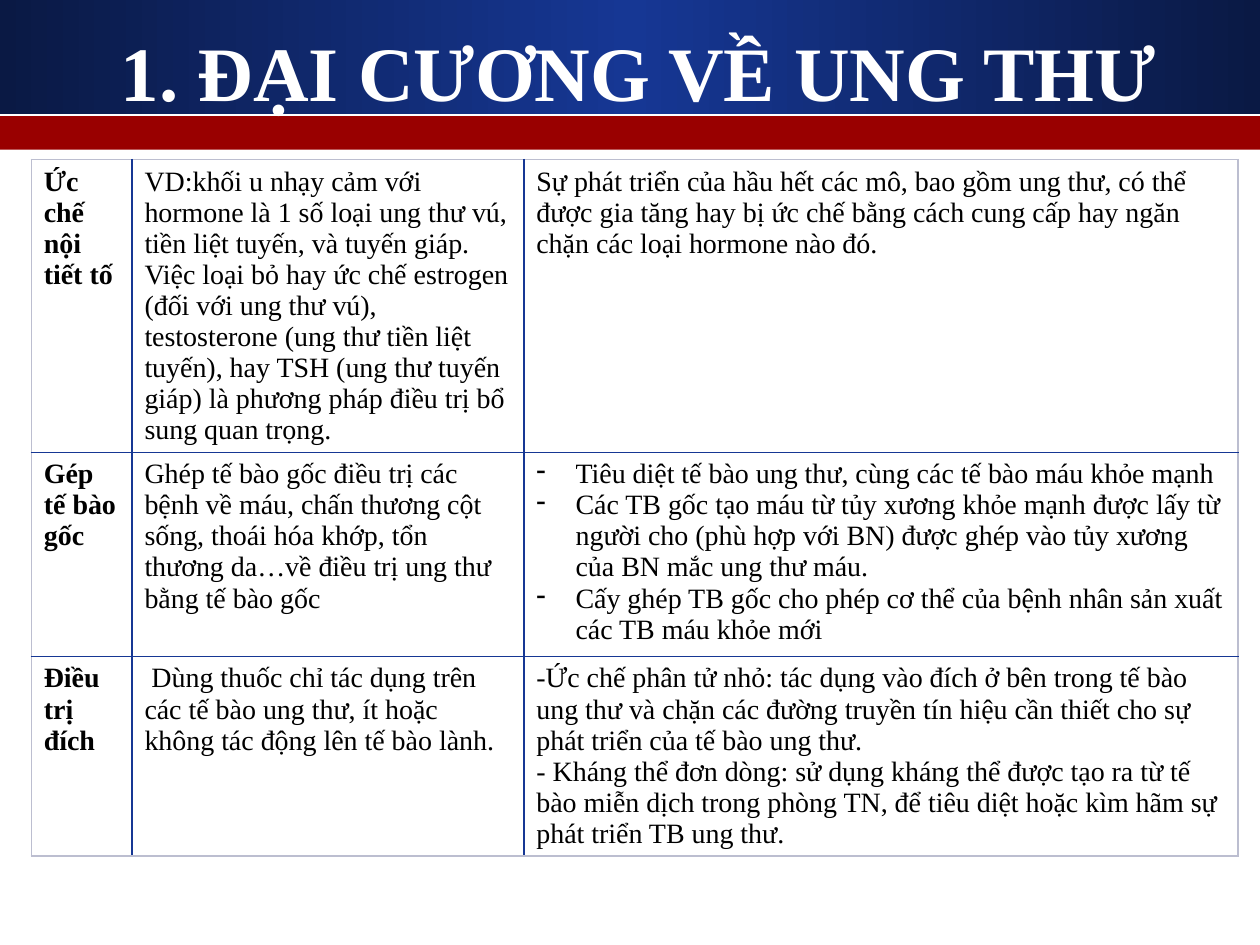
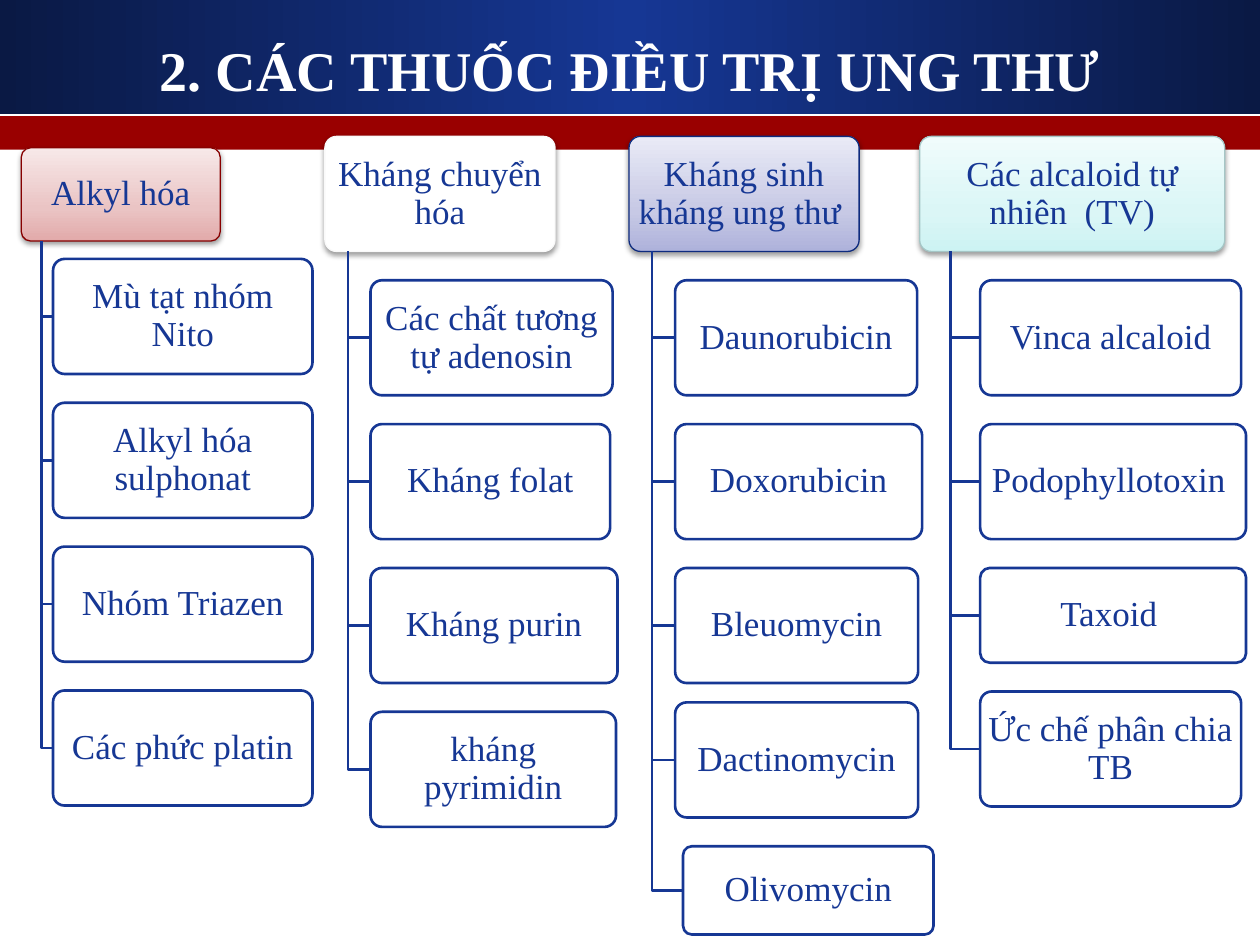
from dataclasses import dataclass

from lxml import etree
from pptx import Presentation
from pptx.dml.color import RGBColor
from pptx.enum.shapes import MSO_SHAPE
from pptx.enum.text import MSO_ANCHOR, MSO_AUTO_SIZE, PP_ALIGN
from pptx.oxml.ns import qn
from pptx.util import Cm, Pt

RECTANGLE = MSO_SHAPE.RECTANGLE
ROUNDED = MSO_SHAPE.ROUNDED_RECTANGLE
MIDDLE = MSO_ANCHOR.MIDDLE
CENTER = PP_ALIGN.CENTER
NO_FIT = MSO_AUTO_SIZE.NONE
TITLE_ONLY = 5


@dataclass(frozen=True)
class Theme:
    font: str = "Times New Roman"
    blue: str = "163794"
    navy: str = "0A1944"
    red: str = "990000"
    white: str = "FFFFFF"
    black: str = "000000"
    table_edge: str = "BCBED0"
    cell_size: int = 16
    box_size: int = 20
    box_line: float = 1.5
    head_line: float = 0.75


THEME = Theme()
GAP = 0.58
BOX_HEIGHT = 2.32


@dataclass(frozen=True)
class Drug:
    name: str
    width: float
    height: float = BOX_HEIGHT
    gap: float = GAP
    shift: float = 0


@dataclass(frozen=True)
class Family:
    name: str
    place: tuple  # left, top, width, height of the head, in cm
    fill: tuple
    line: str
    drug_left: float
    drugs: tuple


FAMILIES = (
    Family("Alkyl hóa", (0.43, 2.98, 4.01, 1.88),
           ((0, "E2AAAA"), (35, "EAC4C4"), (100, "F7E8E8")), "870000", 1.07, (
               Drug("Mù tạt nhóm Nito", 5.23, gap=0.36),
               Drug("Alkyl hóa sulphonat", 5.23),
               Drug("Nhóm Triazen", 5.23),
               Drug("Các phức platin", 5.23))),
    Family("Kháng chuyển hóa", (6.55, 2.75, 4.64, BOX_HEIGHT),
           ((0, THEME.white), (100, THEME.white)), "F9F9F9", 7.47, (
               Drug("Các chất tương tự adenosin", 4.88),
               Drug("Kháng folat", 4.83),
               Drug("Kháng purin", 4.98),
               Drug("kháng pyrimidin", 4.95))),
    Family("Kháng sinh kháng ung thư ", (12.68, 2.75, 4.64, BOX_HEIGHT),
           ((0, "AEB2DB"), (35, "C7C9E5"), (100, "E9EAF6")), "0E2B7E", 13.61, (
               Drug("Daunorubicin", 4.88),
               Drug("Doxorubicin", 4.98),
               Drug("Bleuomycin", 4.9),
               Drug("Dactinomycin", 4.9, gap=0.39),
               Drug("Olivomycin", 5.05, height=1.78, shift=0.16))),
    Family("Các alcaloid tự nhiên  (TV)", (18.54, 2.75, 6.15, BOX_HEIGHT),
           ((0, "CDF3F3"), (35, "DBF6F6"), (100, "F0FCFC")), "A5C6C6", 19.76, (
               Drug("Vinca alcaloid", 5.26),
               Drug("Podophyllotoxin ", 5.36),
               Drug("Taxoid ", 5.36, height=1.91),
               Drug("Ức chế phân chia TB", 5.26))),
)

# Each cell is a list of paragraphs; a leading tab marks a bulleted one
TREATMENTS = (
    (["Ức chế nội tiết tố"],
     ["VD:khối u nhạy cảm với hormone là 1 số loại ung thư vú, tiền liệt tuyến, "
      "và tuyến giáp. Việc loại bỏ hay ức chế estrogen (đối với ung thư vú), "
      "testosterone (ung thư tiền liệt tuyến), hay TSH (ung thư tuyến giáp) là "
      "phương pháp điều trị bổ sung quan trọng."],
     ["Sự phát triển của hầu hết các mô, bao gồm ung thư, có thể được gia tăng "
      "hay bị ức chế bằng cách cung cấp hay ngăn chặn các loại hormone nào đó."]),
    (["Gép tế bào gốc"],
     ["Ghép tế bào gốc điều trị các bệnh về máu, chấn thương cột sống, thoái hóa "
      "khớp, tổn thương da…về điều trị ung thư bằng tế bào gốc"],
     ["\tTiêu diệt tế bào ung thư, cùng các tế bào máu khỏe mạnh",
      "\tCác TB gốc tạo máu từ tủy xương khỏe mạnh được lấy từ người cho (phù hợp "
      "với BN) được ghép vào tủy xương của BN mắc ung thư máu.",
      "\tCấy ghép TB gốc cho phép cơ thể của bệnh nhân sản xuất các TB máu khỏe "
      "mới"]),
    (["Điều trị đích"],
     [" Dùng thuốc chỉ tác dụng trên các tế bào ung thư, ít hoặc không tác động "
      "lên tế bào lành."],
     ["-Ức chế phân tử nhỏ: tác dụng vào đích ở bên trong tế bào ung thư và chặn "
      "các đường truyền tín hiệu cần thiết cho sự phát triển của tế bào ung thư.",
      "- Kháng thể đơn dòng: sử dụng kháng thể được tạo ra từ tế bào miễn dịch "
      "trong phòng TN, để tiêu diệt hoặc kìm hãm sự phát triển TB ung thư."]),
)


# Formatting helpers
def apply_format(target, values):
    for name, value in values.items():
        setattr(target, name, value)


def format_font(para, size, color, bold=False):
    apply_format(para.font, {"name": THEME.font, "size": Pt(size), "bold": bold})
    para.font.color.rgb = RGBColor.from_string(color)


def lengths(*values):
    return [Cm(value) for value in values]


def add_node(parent, tag, **values):
    return etree.SubElement(parent, qn(tag), values)


def fill_solid(target, color):
    target.fill.solid()
    target.fill.fore_color.rgb = RGBColor.from_string(color)


def fill_gradient(shape, stops, angle):
    shape.fill.gradient()
    shape.fill.gradient_angle = angle
    stop_list = shape._element.spPr.find(qn("a:gradFill")).find(qn("a:gsLst"))
    for stop in list(stop_list):
        stop_list.remove(stop)
    for position, color in stops:
        stop = add_node(stop_list, "a:gs", pos=str(position * 1000))
        add_node(stop, "a:srgbClr", val=color)


def draw_line(shape, color, width):
    shape.line.color.rgb = RGBColor.from_string(color)
    shape.line.width = Pt(width)


def add_soft_shadow(shape):
    effects = shape._element.spPr.find(qn("a:effectLst"))
    shadow = add_node(effects, "a:outerShdw", blurRad="40000", dist="20000",
                      dir="5400000", rotWithShape="0")
    color = add_node(shadow, "a:srgbClr", val=THEME.black)
    add_node(color, "a:alpha", val="38000")


# Shared parts
def add_bands(layout, page):
    """Draw the header bands and move them behind the layout's placeholders."""
    bands = [page.shapes.add_shape(RECTANGLE, *lengths(0, top, 25.4, height))
             for top, height in ((0, 2.31), (2.34, 0.68))]
    blue_band, red_band = bands
    fill_gradient(blue_band, ((0, THEME.navy), (50, THEME.blue), (100, THEME.navy)), 0)
    fill_solid(red_band, THEME.red)
    for index, band in enumerate(bands):
        band.shadow.inherit = False
        band.line.fill.background()
        band._element.nvSpPr.cNvPr.set("id", str(101 + index))
        layout.shapes._spTree.insert(2 + index, band._element)


def set_title(page, text, place, size):
    title = page.shapes.title
    apply_format(title, dict(zip(("left", "top", "width", "height"), lengths(*place))))
    frame = title.text_frame
    frame.text = text
    apply_format(frame, {"vertical_anchor": MIDDLE, "auto_size": NO_FIT, "word_wrap": True})
    para = frame.paragraphs[0]
    para.alignment = CENTER
    format_font(para, size, THEME.white, bold=True)


# Table of treatments
def set_borders(cell, colors):
    properties = cell._tc.get_or_add_tcPr()
    for side, color in zip("LRTB", colors):
        line = add_node(properties, f"a:ln{side}", w=str(Pt(1)))
        add_node(add_node(line, "a:solidFill"), "a:srgbClr", val=color)


def add_bullet(para):
    properties = para._p.get_or_add_pPr()
    indent = Cm(0.79)
    properties.set("marL", str(indent))
    properties.set("indent", str(-indent))
    add_node(properties, "a:buChar", char="-")


def write_cell(cell, texts, bold):
    frame = cell.text_frame
    for index, text in enumerate(texts):
        para = frame.add_paragraph() if index else frame.paragraphs[0]
        if text.startswith("\t"):
            add_bullet(para)
        para.text = text.lstrip("\t")
        format_font(para, THEME.cell_size, THEME.black, bold)


def add_treatment_table(page):
    widths, heights = (2.03, 7.9, 14.4), (5.8, 4.12, 3.56)
    table = page.shapes.add_table(len(heights), len(widths),
                                  *lengths(0.63, 3.22, sum(widths), sum(heights))).table
    apply_format(table, {"first_row": False, "horz_banding": False})
    for column, width in zip(table.columns, widths):
        column.width = Cm(width)
    for row, height in zip(table.rows, heights):
        row.height = Cm(height)
    for r, texts_in_row in enumerate(TREATMENTS):
        for c, texts in enumerate(texts_in_row):
            cell = table.cell(r, c)
            outer = (c == 0, c == len(widths) - 1, r == 0, r == len(heights) - 1)
            set_borders(cell, [THEME.table_edge if edge else THEME.blue for edge in outer])
            fill_solid(cell, THEME.white)
            write_cell(cell, texts, bold=c == 0)


# Tree of drug families
def add_box(page, text, place):
    box = page.shapes.add_shape(ROUNDED, *lengths(*place))
    box.shadow.inherit = False
    box.adjustments[0] = 0.1
    frame = box.text_frame
    apply_format(frame, {"word_wrap": True, "vertical_anchor": MIDDLE,
                         "margin_left": Cm(0.1), "margin_right": Cm(0.1),
                         "margin_top": Cm(0.08), "margin_bottom": Cm(0.08)})
    para = frame.paragraphs[0]
    para.text = text
    apply_format(para, {"alignment": CENTER, "line_spacing": 0.9})
    format_font(para, THEME.box_size, THEME.blue)
    return box


def add_branch(page, trunk, top, end, middle):
    outline = page.shapes.build_freeform(Cm(trunk), Cm(top))
    outline.add_line_segments([lengths(trunk, middle), lengths(end, middle)], close=False)
    branch = outline.convert_to_shape()
    branch.shadow.inherit = False
    branch.fill.background()
    draw_line(branch, THEME.blue, THEME.box_line)


def add_family(page, family):
    left, top, width, height = family.place
    head = add_box(page, family.name, family.place)
    fill_gradient(head, family.fill, 90)
    draw_line(head, family.line, THEME.head_line)
    add_soft_shadow(head)

    trunk = left + width / 10
    head_bottom = bottom = top + height
    for drug in family.drugs:
        drug_left = family.drug_left + drug.shift
        drug_top = bottom + drug.gap
        bottom = drug_top + drug.height
        add_branch(page, trunk, head_bottom, drug_left, drug_top + drug.height / 2)
        box = add_box(page, drug.name, (drug_left, drug_top, drug.width, drug.height))
        fill_solid(box, THEME.white)
        draw_line(box, THEME.blue, THEME.box_line)


def main():
    deck = Presentation()
    deck.slide_width, deck.slide_height = lengths(25.4, 19.05)
    layout = deck.slide_layouts[TITLE_ONLY]

    # Overview of treatments
    page = deck.slides.add_slide(layout)
    add_bands(layout, page)
    set_title(page, "1. ĐẠI CƯƠNG VỀ UNG THƯ", (2.08, 0.05, 21.6, 2.74), 44)
    add_treatment_table(page)

    # Drug families
    page = deck.slides.add_slide(layout)
    set_title(page, "2. CÁC THUỐC ĐIỀU TRỊ UNG THƯ", (1.27, -0.2, 22.86, 3.18), 32)
    for family in FAMILIES:
        add_family(page, family)

    deck.save("out.pptx")


if __name__ == "__main__":
    main()
